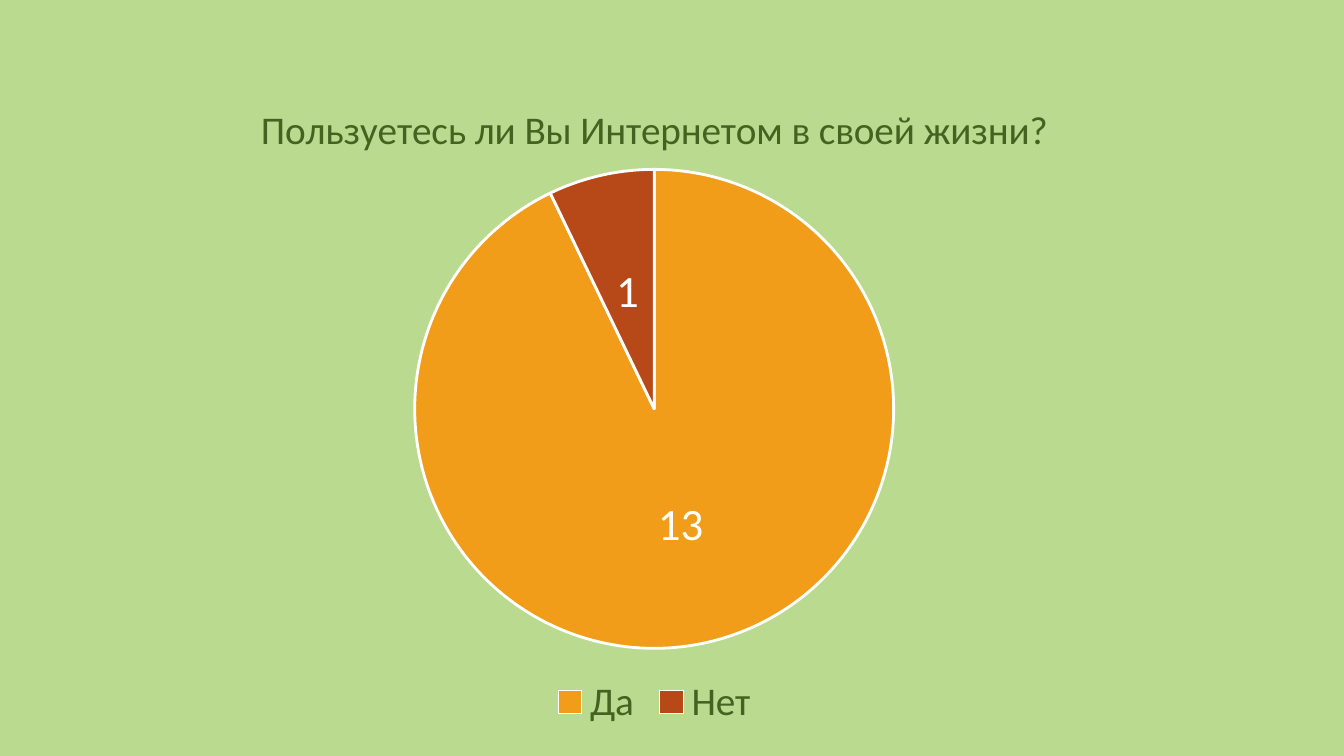
from lxml.etree import SubElement
from pptx import Presentation
from pptx.chart.data import CategoryChartData
from pptx.dml.color import RGBColor
from pptx.enum.chart import XL_CHART_TYPE, XL_LABEL_POSITION, XL_LEGEND_POSITION
from pptx.oxml.ns import qn
from pptx.util import Pt

COLORS = {
    "background": "B9DA8F",
    "text": "466221",
    "white": "FFFFFF",
    "yes": "F19D19",
    "no": "B74919",
}
PLOT_AREA = {"x": 0.27, "y": 0.14, "w": 0.46, "h": 0.73}


class SlideBuilder:
    def __init__(self, deck, font_name):
        self.font_name = font_name
        self.page = deck.slides.add_slide(deck.slide_layouts[6])

    def color(self, name):
        return RGBColor.from_string(COLORS[name])

    def fill(self, target, name):
        target.fill.solid()
        target.fill.fore_color.rgb = self.color(name)

    def style(self, font, size, color):
        for key, value in {"name": self.font_name, "size": Pt(size), "bold": False}.items():
            setattr(font, key, value)
        font.color.rgb = self.color(color)

    def place_plot(self, chart):
        plot_area = chart._chartSpace.chart.plotArea
        for old in plot_area.findall(qn("c:layout")):
            plot_area.remove(old)
        layout = SubElement(plot_area, qn("c:layout"))
        plot_area.insert(0, layout)
        manual = SubElement(layout, qn("c:manualLayout"))
        settings = {"layoutTarget": "inner", "xMode": "edge", "yMode": "edge", **PLOT_AREA}
        for tag, value in settings.items():
            SubElement(manual, qn(f"c:{tag}")).set("val", str(value))

    def pie(self, box, title, slices):
        data = CategoryChartData()
        data.categories = [name for name, _, _ in slices]
        data.add_series("Series 1", [value for _, value, _ in slices])
        frame = self.page.shapes.add_chart(XL_CHART_TYPE.PIE, *map(Pt, box), data)
        chart = frame.chart
        self.style(chart.font, 10, "white")
        self.place_plot(chart)

        # Title
        chart.has_title = True
        para = chart.chart_title.text_frame.paragraphs[0]
        span = para.add_run()
        span.text = title
        self.style(span.font, 28, "text")

        # Slices
        plot = chart.plots[0]
        plot.vary_by_categories = True
        for index, (_, _, color) in enumerate(slices):
            point = plot.series[0].points[index]
            self.fill(point.format, color)
            point.format.line.color.rgb = self.color("white")
            point.format.line.width = Pt(2)

        # Value labels
        plot.has_data_labels = True
        labels = plot.data_labels
        for key, value in {"show_value": True, "show_percentage": False,
                           "position": XL_LABEL_POSITION.CENTER}.items():
            setattr(labels, key, value)
        self.style(labels.font, 32, "white")

        # Legend
        chart.has_legend = True
        for key, value in {"position": XL_LEGEND_POSITION.BOTTOM,
                           "include_in_layout": False}.items():
            setattr(chart.legend, key, value)
        self.style(chart.legend.font, 28, "text")


def main():
    deck = Presentation()
    deck.slide_width, deck.slide_height = Pt(960), Pt(540)
    builder = SlideBuilder(deck, "Calibri")
    builder.fill(builder.page.background, "background")
    builder.pie(
        (93.6, 55.4, 747.4, 468.7),
        "Пользуетесь ли Вы Интернетом в своей жизни?",
        [("Да", 13, "yes"), ("Нет", 1, "no")],
    )
    deck.save("out.pptx")


if __name__ == "__main__":
    main()
